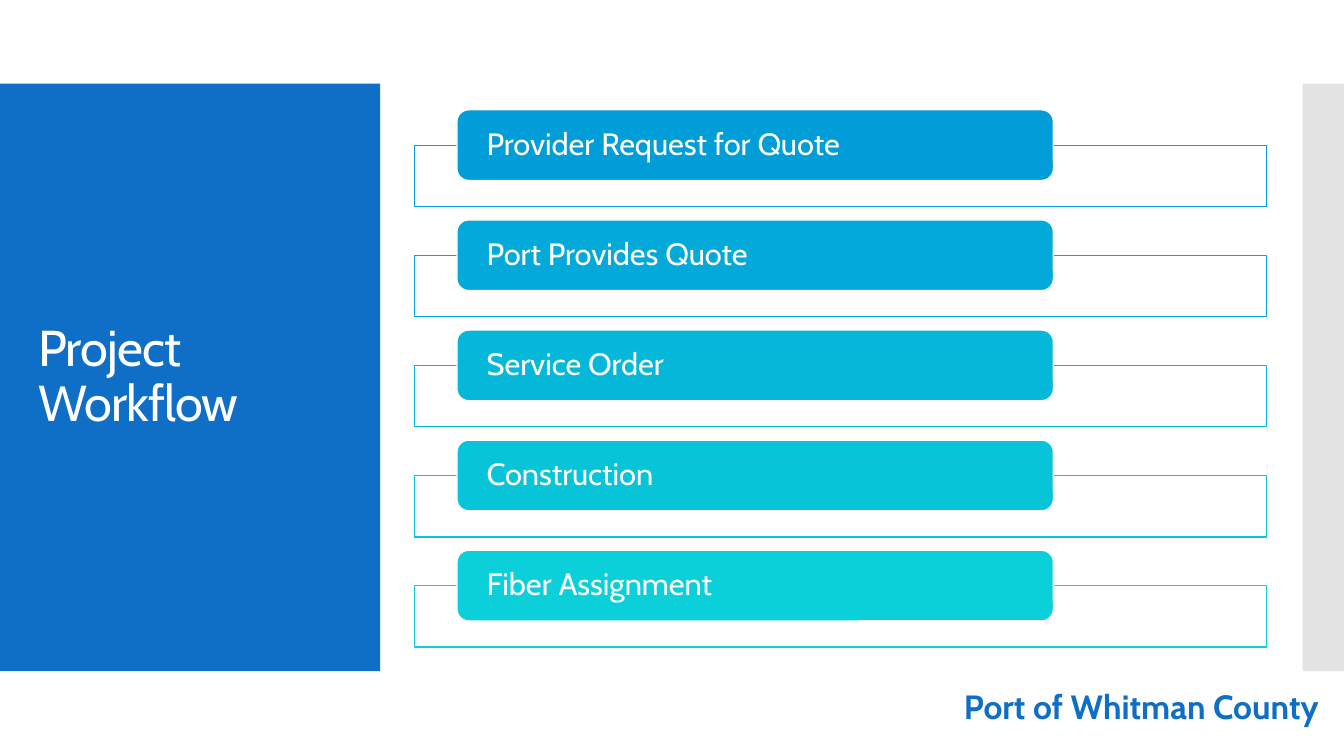
from pptx import Presentation
from pptx.dml.color import RGBColor
from pptx.enum.shapes import MSO_SHAPE
from pptx.enum.text import MSO_ANCHOR, MSO_AUTO_SIZE, PP_ALIGN
from pptx.oxml.ns import qn
from pptx.util import Inches, Pt
from lxml import etree

RECTANGLE, ROUNDED = MSO_SHAPE.RECTANGLE, MSO_SHAPE.ROUNDED_RECTANGLE
MIDDLE, NO_FIT = MSO_ANCHOR.MIDDLE, MSO_AUTO_SIZE.NONE
LEFT, CENTER = PP_ALIGN.LEFT, PP_ALIGN.CENTER

FONT = "Cabin"
COLORS = {"white": "FFFFFF", "blue": "0F6FC6", "gray": "C8C8C8"}
STEPS = [
    ("Provider Request for Quote", "009DD9"),
    ("Port Provides Quote", "03AAD9"),
    ("Service Order", "05B7D9"),
    ("Construction", "08C4D9"),
    ("Fiber Assignment", "0BD0D9"),
]


def add_block(slide, kind, box, fill, line=None, opacity=None):
    shape = slide.shapes.add_shape(kind, *map(Inches, box))
    shape.shadow.inherit = False
    shape.fill.solid()
    shape.fill.fore_color.rgb = RGBColor.from_string(fill)
    if opacity is not None:
        color = shape.fill._xPr.find(qn("a:solidFill"))[0]
        etree.SubElement(color, qn("a:alpha")).set("val", str(opacity * 1000))
    if line:
        shape.line.color.rgb = RGBColor.from_string(line)
        shape.line.width = Pt(0.85)
    else:
        shape.line.fill.background()
    return shape


def write_text(shape, text, size, color, align=LEFT, bold=False, spacing=0.9):
    frame = shape.text_frame
    frame.word_wrap = True
    frame.auto_size = NO_FIT
    frame.vertical_anchor = MIDDLE
    paragraph = frame.paragraphs[0]
    paragraph.alignment = align
    paragraph.line_spacing = spacing
    run = paragraph.add_run()
    run.text = text
    run.font.name = FONT
    run.font.size = Pt(size)
    run.font.bold = bold
    run.font.color.rgb = RGBColor.from_string(color)
    return run


def add_title_panel(slide, box):
    left, top, width, height = box
    add_block(slide, RECTANGLE, box, COLORS["blue"])
    title = slide.shapes.title
    title.left, title.top = Inches(left + 0.28), Inches(top + 0.4)
    title.width, title.height = Inches(width - 0.55), Inches(height - 0.8)
    run = write_text(title, "Project Workflow", 36, COLORS["white"])
    run.font._element.set("spc", "-60")
    slide.shapes._spTree.append(title._element)


def add_workflow(slide, box):
    left, top, width, height = box
    frame_height, label_height, label_offset = 0.61, 0.7, 0.35
    pitch = (height - label_offset - frame_height) / (len(STEPS) - 1)
    for index, (name, color) in enumerate(STEPS):
        step_top = top + index * pitch
        frame_box = (left, step_top + label_offset, width, frame_height)
        add_block(slide, RECTANGLE, frame_box, COLORS["white"], color, 90)
        label_box = (left + width * 0.05, step_top, width * 0.7, label_height)
        label = add_block(slide, ROUNDED, label_box, color, COLORS["white"])
        label.text_frame.margin_left = label.text_frame.margin_right = Inches(0.26)
        label.text_frame.margin_top = label.text_frame.margin_bottom = 0
        write_text(label, name, 22, COLORS["white"])


def add_organization(slide, box):
    shape = slide.shapes.add_textbox(*map(Inches, box))
    write_text(shape, "Port of Whitman County", 24, COLORS["blue"], CENTER, True, 1.0)


def main():
    presentation = Presentation()
    presentation.slide_width = Inches(13.33)
    presentation.slide_height = Inches(7.5)
    slide = presentation.slides.add_slide(presentation.slide_layouts[5])
    add_title_panel(slide, (0, 0.83, 3.77, 5.83))
    add_block(slide, RECTANGLE, (12.92, 0.83, 0.41, 5.83), COLORS["gray"], opacity=50)
    add_workflow(slide, (4.11, 1.09, 8.45, 5.33))
    add_organization(slide, (9.31, 6.76, 4.02, 0.49))
    presentation.save("out.pptx")


if __name__ == "__main__":
    main()
